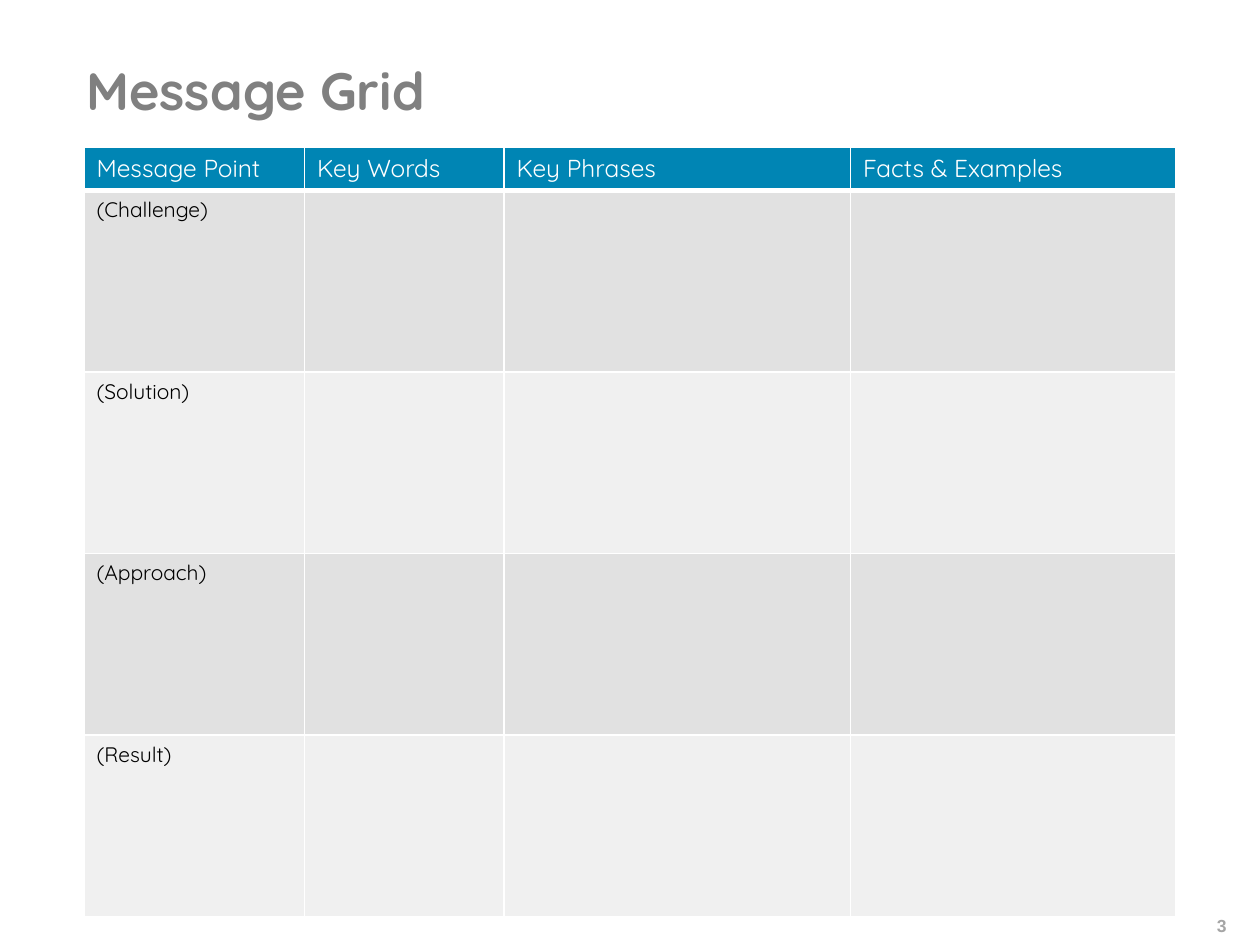
from pptx import Presentation
from pptx.dml.color import RGBColor as Rgb
from pptx.enum.text import MSO_ANCHOR as Anchor, MSO_AUTO_SIZE as Fit, PP_ALIGN as Align
from pptx.oxml import parse_xml
from pptx.oxml.ns import nsdecls
from pptx.util import Inches, Pt

WHITE = Rgb(0xFF, 0xFF, 0xFF)
BLACK = Rgb(0, 0, 0)
BLUE = Rgb(0x00, 0x85, 0xB4)
DARK = Rgb(0xE1, 0xE1, 0xE1)
LIGHT = Rgb(0xF0, 0xF0, 0xF0)
GREY = Rgb(0x80, 0x80, 0x80)
PALE = Rgb(0xA5, 0xA5, 0xA5)

HEADS = ["Message Point", "Key Words", "Key Phrases", "Facts & Examples"]
POINTS = ["(Challenge)", "(Solution)", "(Approach)", "(Result)"]
COLS = [21, 19, 33, 31]
HEAD, ROW = 4.1, 17.3


def write(frame, text, size=12, color=BLACK, font="Quicksand", bold=False,
          align=Align.LEFT):
    para = frame.paragraphs[0]
    para.alignment = align
    run = para.add_run()
    run.text = text
    run.font.name = font
    run.font.size = Pt(size)
    run.font.bold = bold
    run.font.color.rgb = color


def edge(cell, side, width):
    """Draw one white border; call before the cell is filled."""
    cell._tc.get_or_add_tcPr().append(parse_xml(
        f'<a:ln{side} {nsdecls("a")} w="{Pt(width)}"><a:solidFill>'
        f'<a:srgbClr val="{WHITE}"/></a:solidFill></a:ln{side}>'))


class Page:
    """Places elements on a grid of 120 columns by 90 rows."""

    def __init__(self, deck):
        deck.slide_width, deck.slide_height = Inches(10), Inches(7.5)
        self.unit = deck.slide_width / 120
        self.slide = deck.slides.add_slide(deck.slide_layouts[5])

    def span(self, *units):
        return [round(n * self.unit) for n in units]

    def title(self, text, *box):
        shape = self.slide.shapes.title
        shape.left, shape.top, shape.width, shape.height = self.span(*box)
        frame = shape.text_frame
        frame.auto_size = Fit.NONE
        frame.vertical_anchor = Anchor.MIDDLE
        frame.margin_top = frame.margin_bottom = 0
        write(frame, text, size=30, color=GREY, bold=True)

    def label(self, text, *box, **style):
        frame = self.slide.shapes.add_textbox(*self.span(*box)).text_frame
        frame.word_wrap = True
        write(frame, text, **style)

    def cell(self, cell, text, fill, base=1, **style):
        for side, width in zip("LRTB", (1, 1, 1, base)):
            edge(cell, side, width)
        cell.fill.solid()
        cell.fill.fore_color.rgb = fill
        if text:
            write(cell.text_frame, text, **style)

    def grid(self, left, top):
        rows = [HEAD] + [ROW] * len(POINTS)
        box = self.span(left, top, sum(COLS), sum(rows))
        table = self.slide.shapes.add_table(len(rows), len(COLS), *box).table
        for col, width in zip(table.columns, self.span(*COLS)):
            col.width = width
        for row, height in zip(table.rows, self.span(*rows)):
            row.height = height
        for c, head in enumerate(HEADS):
            self.cell(table.cell(0, c), head, BLUE, base=3, size=14, color=WHITE)
            for r, point in enumerate(POINTS, 1):
                self.cell(table.cell(r, c), "" if c else point,
                          DARK if r % 2 else LIGHT)


def main():
    deck = Presentation()
    page = Page(deck)
    page.title("Message Grid", 7, 4, 105, 9)
    page.grid(8, 14)
    page.label("3", 109, 86.6, 9, 3, size=10, color=PALE, font="Arial",
               bold=True, align=Align.RIGHT)
    deck.save("out.pptx")


if __name__ == "__main__":
    main()
